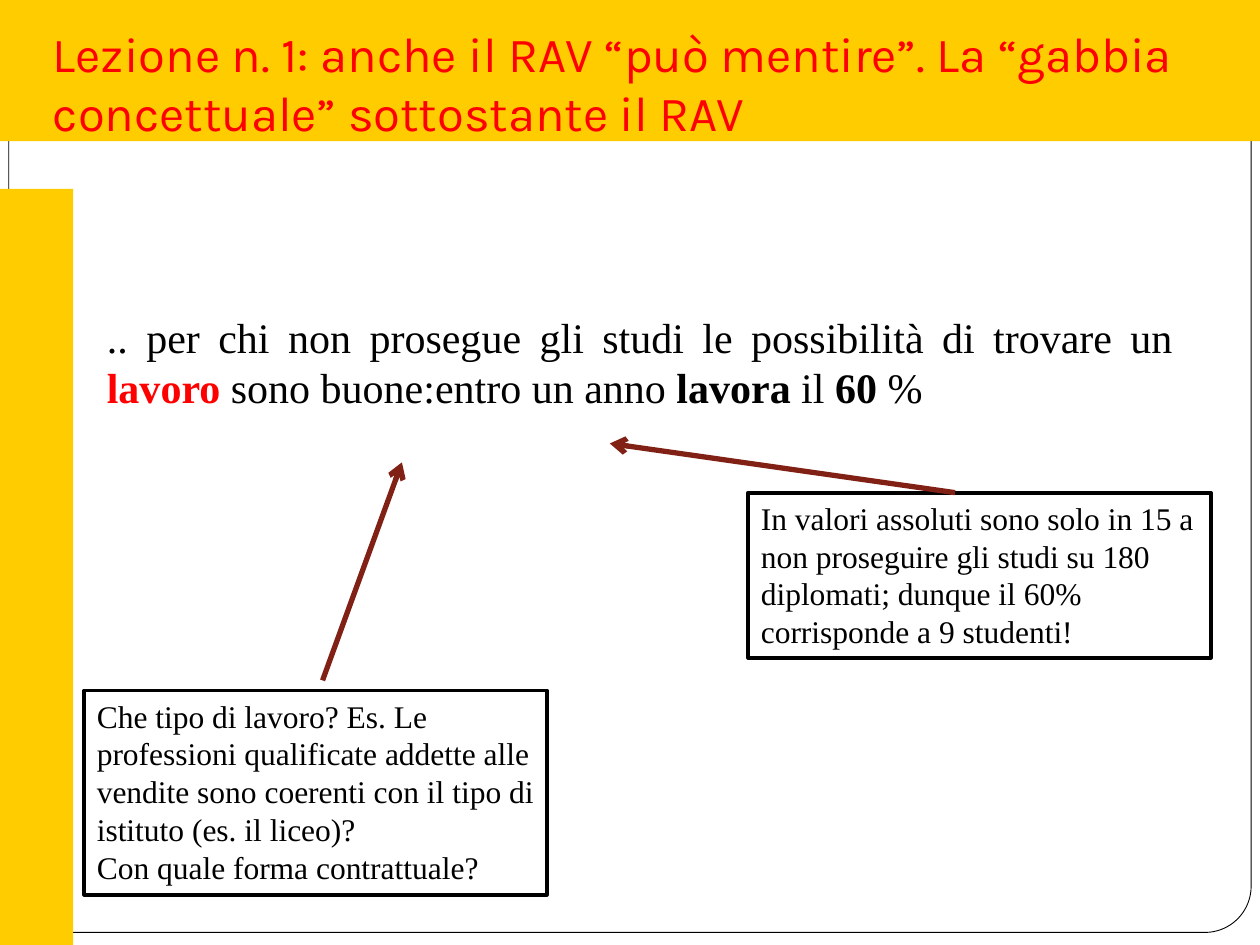
import lxml.etree
import pptx
import pptx.dml.color
import pptx.enum.shapes
import pptx.enum.text
import pptx.oxml.ns
import pptx.util
from pptx.util import Inches

COLORS = {
    "yellow": "FFCC00",
    "red": "FF0000",
    "arrow": "812014",
    "black": "000000",
    "white": "FFFFFF",
}
SHAPES = pptx.enum.shapes.MSO_SHAPE
ANCHORS = pptx.enum.text.MSO_ANCHOR
ALIGNMENTS = pptx.enum.text.PP_ALIGN


def color(name):
    return pptx.dml.color.RGBColor.from_string(COLORS[name])


class SlideBuilder:
    serif = "Times New Roman"
    heading = "Karla"

    def __init__(self, page):
        self.page = page

    def format_run(self, span, size, font, tint="black", bold=False):
        span.font.size = pptx.util.Pt(size)
        span.font.name = font
        span.font.bold = bold
        span.font.color.rgb = color(tint)

    def place(self, box, left, top, width, height):
        box.left, box.top = Inches(left), Inches(top)
        box.width, box.height = Inches(width), Inches(height)

    def panel(self, kind, bounds, fill=None, line=None, weight=0.5):
        box = self.page.shapes.add_shape(kind, *map(Inches, bounds))
        box.shadow.inherit = False
        if fill:
            box.fill.solid()
            box.fill.fore_color.rgb = color(fill)
        else:
            box.fill.background()
        if line:
            box.line.color.rgb = color(line)
            box.line.width = pptx.util.Pt(weight)
        else:
            box.line.fill.background()
        return box

    def title(self, text, bounds):
        box = self.page.shapes.title
        self.place(box, *bounds)
        frame = box.text_frame
        frame.text = text
        frame.word_wrap = True
        frame.auto_size = pptx.enum.text.MSO_AUTO_SIZE.NONE
        frame.vertical_anchor = ANCHORS.BOTTOM
        frame.margin_bottom = Inches(0.1)
        para = frame.paragraphs[0]
        para.alignment = ALIGNMENTS.LEFT
        para.line_spacing = 1.0
        self.format_run(para.runs[0], 28, self.heading, "red")
        # Bring the title in front of the yellow band
        self.page.shapes.element.append(box.element)

    def statement(self, parts, bounds):
        box = self.page.shapes.add_textbox(*map(Inches, bounds))
        frame = box.text_frame
        frame.word_wrap = True
        frame.margin_top = Inches(0.45)
        para = frame.paragraphs[0]
        para.alignment = ALIGNMENTS.JUSTIFY
        for text, tint, bold in parts:
            span = para.add_run()
            span.text = text
            self.format_run(span, 24, self.serif, tint, bold)

    def callout(self, text, bounds):
        box = self.panel(SHAPES.RECTANGLE, bounds, line="black", weight=2.25)
        frame = box.text_frame
        frame.text = text
        frame.word_wrap = True
        frame.vertical_anchor = ANCHORS.TOP
        for para in frame.paragraphs:
            para.alignment = ALIGNMENTS.LEFT
            self.format_run(para.runs[0], 18, self.serif)

    def arrow(self, start, end):
        line = self.page.shapes.add_connector(
            pptx.enum.shapes.MSO_CONNECTOR.STRAIGHT, *map(Inches, start + end))
        line.line.color.rgb = color("arrow")
        line.line.width = pptx.util.Pt(3)
        qualified = pptx.oxml.ns.qn
        properties = line.element.spPr
        outline = properties.find(qualified("a:ln"))
        lxml.etree.SubElement(outline, qualified("a:tailEnd"), type="arrow")
        lxml.etree.SubElement(properties, qualified("a:effectLst"))


def main():
    deck = pptx.Presentation()
    deck.slide_width, deck.slide_height = Inches(10), Inches(7.5)
    builder = SlideBuilder(deck.slides.add_slide(deck.slide_layouts[5]))

    # Frame and yellow bands
    frame = builder.panel(SHAPES.ROUNDED_RECTANGLE, (0.07, 0.08, 9.86, 7.32),
                          fill="white", line="black")
    frame.adjustments[0] = 0.05
    builder.panel(SHAPES.RECTANGLE, (0, -0.06, 10, 1.18), fill="yellow")
    builder.panel(SHAPES.RECTANGLE, (0, 1.5, 0.58, 6), fill="yellow")

    # Title and main statement
    builder.title("Lezione n. 1: anche il RAV “può mentire”. La “gabbia "
                  "concettuale” sottostante il RAV", (0.32, -0.03, 9.68, 1.25))
    builder.statement([
        (".. per chi non prosegue gli studi le possibilità di trovare un ",
         "black", False),
        ("lavoro", "red", True),
        (" sono buone:entro un anno ", "black", False),
        ("lavora", "black", True),
        (" il ", "black", False),
        ("60 ", "black", True),
        ("%", "black", False),
    ], (0.75, 2.02, 8.66, 1.99))

    # Comments and the arrows to the words they discuss
    builder.callout("Che tipo di lavoro? Es. Le professioni qualificate addette "
                    "alle vendite sono coerenti con il tipo di istituto "
                    "(es. il liceo)?\nCon quale forma contrattuale?",
                    (0.67, 5.48, 3.67, 1.62))
    builder.callout("In valori assoluti sono solo in 15 a non proseguire gli "
                    "studi su 180 diplomati; dunque il 60% corrisponde a "
                    "9 studenti!", (5.94, 3.91, 3.67, 1.31))
    builder.arrow((2.56, 5.4), (3.19, 3.67))
    builder.arrow((7.58, 3.91), (4.84, 3.52))

    deck.save("out.pptx")


if __name__ == "__main__":
    main()
